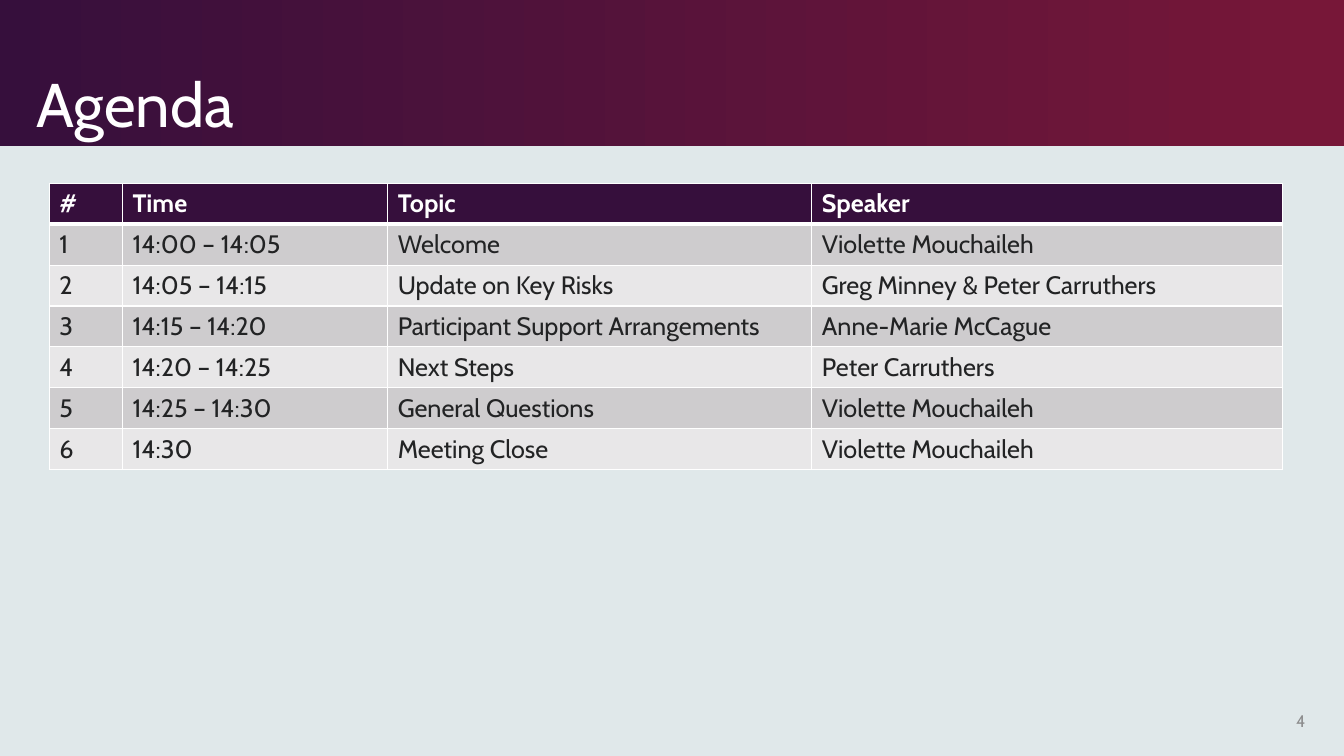
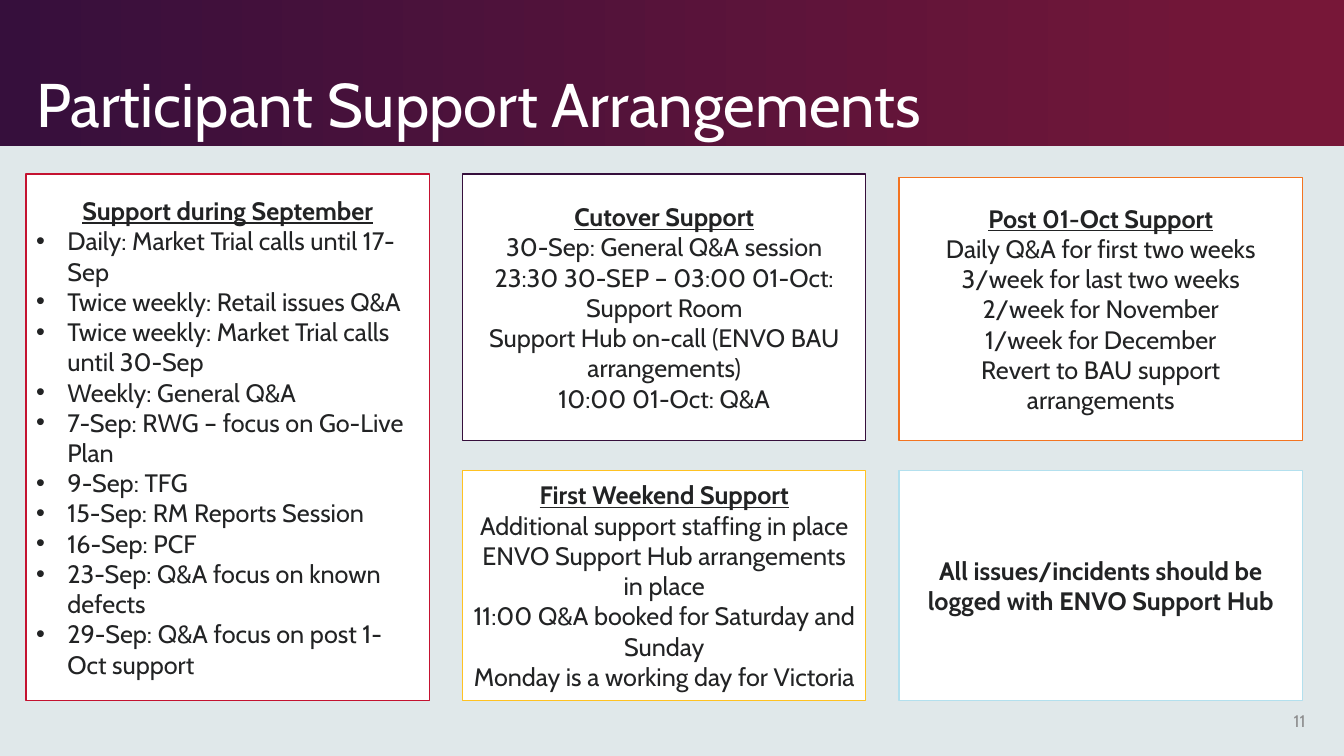
from lxml import etree
from pptx import Presentation
from pptx import util as u
from pptx.dml import color
from pptx.enum import shapes, text
from pptx.oxml import ns

FONT = "Cabin"
PLUM, WINE, PALE, WHITE = "360F3C", "771738", "E0E8EA", "FFFFFF"
INK, GREY = "222324", "8D8D8E"
STRIPES = "E8E7E8", "CECCCE"
SLIDE_WIDTH, SLIDE_HEIGHT = 33.87, 19.05
ALIGN = text.PP_ALIGN

AGENDA = [
    ("#", "Time", "Topic", "Speaker"),
    ("1", "14:00 – 14:05", "Welcome", "Violette Mouchaileh"),
    ("2", "14:05 – 14:15", "Update on Key Risks", "Greg Minney & Peter Carruthers"),
    ("3", "14:15 – 14:20", "Participant Support Arrangements", "Anne-Marie McCague"),
    ("4", "14:20 – 14:25", "Next Steps", "Peter Carruthers"),
    ("5", "14:25 – 14:30", "General Questions", "Violette Mouchaileh"),
    ("6", "14:30", "Meeting Close", "Violette Mouchaileh"),
]
AGENDA_WIDTHS = 1.85, 6.68, 10.69, 11.86
AGENDA_ROW_HEIGHT = 1.03

SEPTEMBER = [
    "Support during September",
    "Daily: Market Trial calls until 17-Sep",
    "Twice weekly: Retail issues Q&A",
    "Twice weekly: Market Trial calls until 30-Sep",
    "Weekly: General Q&A",
    "7-Sep: RWG – focus on Go-Live Plan",
    "9-Sep: TFG",
    "15-Sep: RM Reports Session",
    "16-Sep: PCF",
    "23-Sep: Q&A focus on known defects",
    "29-Sep: Q&A focus on post 1-Oct support",
]
CUTOVER = [
    "Cutover Support",
    "30-Sep: General Q&A session",
    "23:30 30-SEP – 03:00 01-Oct: Support Room",
    "Support Hub on-call (ENVO BAU arrangements)",
    "10:00 01-Oct: Q&A",
]
POST_OCTOBER = [
    "Post 01-Oct Support",
    "Daily Q&A for first two weeks",
    "3/week for last two weeks",
    "2/week for November",
    "1/week for December",
    "Revert to BAU support arrangements",
]
FIRST_WEEKEND = [
    "First Weekend Support",
    "Additional support staffing in place",
    "ENVO Support Hub arrangements in place",
    "11:00 Q&A booked for Saturday and Sunday",
    "Monday is a working day for Victoria",
]
LOGGING = ["All issues/incidents should be logged with ENVO Support Hub"]

BOX_LEFT, BOX_WIDTH, BOX_PITCH = 0.66, 10.16, 11
UPPER_TOP, UPPER_BOTTOM, LOWER_TOP, LOWER_BOTTOM = 4.39, 11.1, 11.86, 17.65


def rgb(hex_value):
    return color.RGBColor.from_string(hex_value)


def paint(fill, hex_value):
    fill.solid()
    fill.fore_color.rgb = rgb(hex_value)


def format_paragraph(paragraph, size, hex_value, align=ALIGN.LEFT, bold=False, underline=False):
    paragraph.alignment = align
    for run in paragraph.runs:
        font = run.font
        font.name, font.size, font.color.rgb = FONT, u.Pt(size), rgb(hex_value)
        font.bold, font.underline = bold, underline


def add_rectangle(slide, left, top, width, height):
    shape = slide.shapes.add_shape(
        shapes.MSO_SHAPE.RECTANGLE, u.Cm(left), u.Cm(top), u.Cm(width), u.Cm(height))
    shape.shadow.inherit = False
    return shape


def add_band(slide):
    band = add_rectangle(slide, 0, 0, SLIDE_WIDTH, 3.68)
    band.line.fill.background()
    band.fill.gradient()
    band.fill.gradient_angle = 0
    for stop, position, hex_value in zip(band.fill.gradient_stops, (0, 0.99), (PLUM, WINE)):
        stop.position, stop.color.rgb = position, rgb(hex_value)
    slide.shapes._spTree.insert(2, band._element)  # behind the title


def format_title(title, wording):
    title.left, title.top, title.width, title.height = map(u.Cm, (0.66, 0.38, 25, 3.3))
    frame = title.text_frame
    frame.text = wording
    frame.auto_size = text.MSO_AUTO_SIZE.NONE
    frame.vertical_anchor = text.MSO_ANCHOR.BOTTOM
    frame.paragraphs[0].line_spacing = 0.9
    format_paragraph(frame.paragraphs[0], 44, WHITE)


def add_page_number(slide, number):
    frame = slide.shapes.add_textbox(u.Cm(31.55), u.Cm(17.65), u.Cm(1.6), u.Cm(1.02)).text_frame
    frame.word_wrap = True
    frame.vertical_anchor = text.MSO_ANCHOR.MIDDLE
    frame.text = str(number)
    format_paragraph(frame.paragraphs[0], 12, GREY, ALIGN.RIGHT)


def add_titled_slide(presentation, title, number):
    slide = presentation.slides.add_slide(presentation.slide_layouts.get_by_name("Title Only"))
    add_band(slide)
    format_title(slide.shapes.title, title)
    add_page_number(slide, number)
    return slide


def set_borders(cell, **widths):
    """Draw white borders; widths in points are keyed by side: L, R, T, B."""
    properties = cell._tc.get_or_add_tcPr()
    for side, width in widths.items():
        line = etree.SubElement(properties, ns.qn(f"a:ln{side}"), w=str(u.Pt(width)))
        fill = etree.SubElement(line, ns.qn("a:solidFill"))
        etree.SubElement(fill, ns.qn("a:srgbClr"), val=WHITE)


def add_agenda(slide):
    table = slide.shapes.add_table(
        len(AGENDA), len(AGENDA_WIDTHS), u.Cm(1.24), u.Cm(4.62),
        u.Cm(sum(AGENDA_WIDTHS)), u.Cm(AGENDA_ROW_HEIGHT * len(AGENDA))).table
    for column, width in zip(table.columns, AGENDA_WIDTHS):
        column.width = u.Cm(width)
    for row_index, entries in enumerate(AGENDA):
        header = row_index == 0
        for cell, entry in zip(table.rows[row_index].cells, entries):
            cell.text_frame.text = entry
            format_paragraph(cell.text_frame.paragraphs[0], 18, WHITE if header else INK, bold=header)
            set_borders(cell, L=1, R=1, T=3 if row_index == 1 else 1, B=3 if header else 1)
            paint(cell.fill, PLUM if header else STRIPES[row_index % 2])


def add_bullet(paragraph):
    properties = paragraph._p.get_or_add_pPr()
    indent = u.Cm(0.79)
    properties.set("marL", str(indent))
    properties.set("indent", str(-indent))
    etree.SubElement(properties, ns.qn("a:buFont"), typeface="Arial")
    etree.SubElement(properties, ns.qn("a:buChar"), char="•")


def add_support_box(slide, column, top, bottom, line_color, lines, bulleted=False):
    """Add a box whose first line is bold, and underlined if more lines follow."""
    box = add_rectangle(slide, BOX_LEFT + column * BOX_PITCH, top, BOX_WIDTH, bottom - top)
    paint(box.fill, WHITE)
    box.line.color.rgb, box.line.width = rgb(line_color), u.Pt(1)
    frame = box.text_frame
    frame.word_wrap = True
    frame.vertical_anchor = text.MSO_ANCHOR.MIDDLE
    frame.text = "\n".join(lines)
    heading, *details = frame.paragraphs
    format_paragraph(heading, 18, INK, ALIGN.CENTER, bold=True, underline=bool(details))
    for paragraph in details:
        format_paragraph(paragraph, 18, INK, ALIGN.LEFT if bulleted else ALIGN.CENTER)
        if bulleted:
            add_bullet(paragraph)


def main():
    presentation = Presentation()
    presentation.slide_width, presentation.slide_height = u.Cm(SLIDE_WIDTH), u.Cm(SLIDE_HEIGHT)
    paint(presentation.slide_master.background.fill, PALE)

    add_agenda(add_titled_slide(presentation, "Agenda", 4))

    support = add_titled_slide(presentation, "Participant Support Arrangements", 11)
    add_support_box(support, 0, UPPER_TOP, LOWER_BOTTOM, "C41230", SEPTEMBER, bulleted=True)
    add_support_box(support, 1, UPPER_TOP, UPPER_BOTTOM, PLUM, CUTOVER)
    add_support_box(support, 2, UPPER_TOP + 0.08, UPPER_BOTTOM, "F37421", POST_OCTOBER)
    add_support_box(support, 1, LOWER_TOP, LOWER_BOTTOM, "FFC222", FIRST_WEEKEND)
    add_support_box(support, 2, LOWER_TOP, LOWER_BOTTOM, "B3E0EE", LOGGING)

    presentation.save("out.pptx")


if __name__ == "__main__":
    main()
